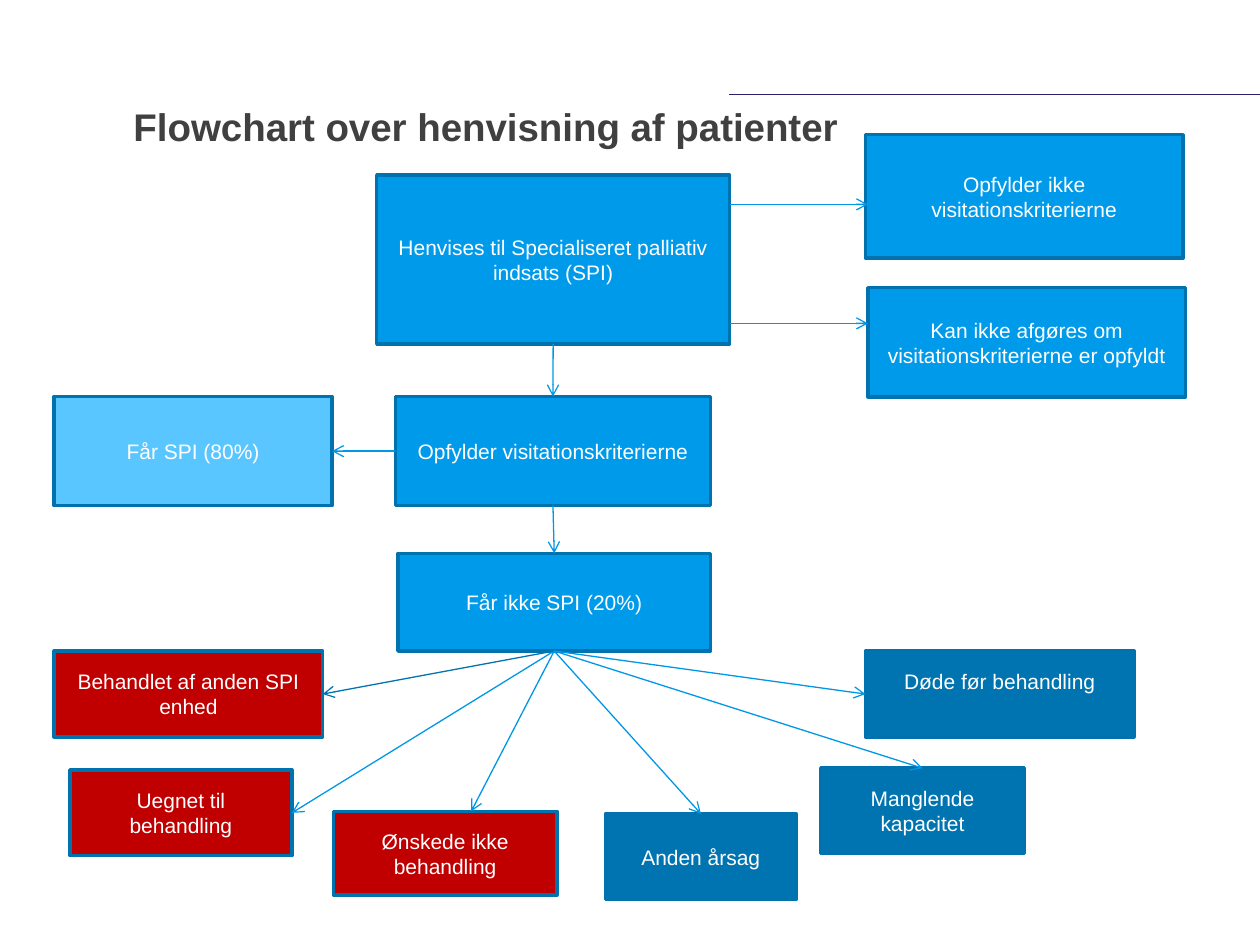
from lxml.etree import SubElement
from pptx import Presentation
from pptx.dml.color import RGBColor
from pptx.enum.shapes import MSO_CONNECTOR as Connector, MSO_SHAPE as Shape
from pptx.enum.text import MSO_ANCHOR as Anchor, PP_ALIGN as Align
from pptx.oxml.ns import qn
from pptx.util import Pt

WHITE = RGBColor(0xFF, 0xFF, 0xFF)
GREY = RGBColor(0x40, 0x40, 0x40)
PURPLE = RGBColor(0x2A, 0x21, 0x6A)
BLUE = RGBColor(0x00, 0x9A, 0xEB)
LIGHT_BLUE = RGBColor(0x5A, 0xC6, 0xFF)
DARK_BLUE = RGBColor(0x00, 0x74, 0xB0)
BORDER = RGBColor(0x00, 0x72, 0xAE)
ARROW = RGBColor(0x00, 0x97, 0xE6)
RED = RGBColor(0xC0, 0x00, 0x00)
TOP, LEFT, BOTTOM, RIGHT = range(4)

BOXES = {
    "referred": ("Henvises til Specialiseret palliativ indsats (SPI)", BLUE, 215.3, 100, 201.6, 96.6),
    "rejected": ("Opfylder ikke visitationskriterierne", BLUE, 494.6, 77, 181.4, 70.6),
    "unsettled": ("Kan ikke afgøres om visitationskriterierne er opfyldt", BLUE, 496, 164.4, 181.4, 62.4),
    "treated": ("Får SPI (80%)", LIGHT_BLUE, 31, 226.6, 158.8, 62.4),
    "eligible": ("Opfylder visitationskriterierne", BLUE, 226, 226.6, 180, 62.4),
    "untreated": ("Får ikke SPI (20%)", BLUE, 227.4, 316.2, 178.6, 55.8),
    "elsewhere": ("Behandlet af anden SPI enhed", RED, 31, 372, 153.4, 49.2),
    "unsuited": ("Uegnet til behandling", RED, 40, 440, 126.8, 49),
    "declined": ("Ønskede ikke behandling", RED, 190.6, 463.6, 127.6, 48),
    "other": ("Anden årsag", DARK_BLUE, 346, 465, 109, 49),
    "capacity": ("Manglende kapacitet", DARK_BLUE, 469, 439, 116.4, 48.6),
    "died": ("Døde før behandling", DARK_BLUE, 494.6, 372, 153.4, 49.2),
}
LINKS = [
    ("referred", BOTTOM, "eligible", TOP, ARROW),
    ("eligible", LEFT, "treated", RIGHT, ARROW),
    ("eligible", BOTTOM, "untreated", TOP, ARROW),
    ("untreated", BOTTOM, "unsuited", RIGHT, ARROW),
    ("untreated", BOTTOM, "other", TOP, ARROW),
    ("untreated", BOTTOM, "capacity", TOP, ARROW),
    ("untreated", BOTTOM, "died", LEFT, ARROW),
    ("untreated", BOTTOM, "elsewhere", RIGHT, DARK_BLUE),
]


def add_span(para, text, size, color, bold=False):
    """Add one formatted run to a paragraph."""
    span = para.add_run()
    span.text = text
    span.font.name = "Arial"
    span.font.size = Pt(size)
    span.font.bold = bold
    span.font.color.rgb = color


def add_title(page, text):
    """Add the slide heading."""
    frame = page.shapes.add_textbox(Pt(76.3), Pt(26), Pt(570), Pt(59.8)).text_frame
    frame.word_wrap = True
    frame.vertical_anchor = Anchor.BOTTOM
    frame.margin_left = frame.margin_right = frame.margin_top = frame.margin_bottom = 0
    para = frame.paragraphs[0]
    para.line_spacing = 0.9
    add_span(para, text, 22, GREY, True)


def add_box(page, text, fill, left, top, width, height):
    """Add a bordered rectangle with centred text."""
    box = page.shapes.add_shape(Shape.RECTANGLE, Pt(left), Pt(top), Pt(width), Pt(height))
    box.shadow.inherit = False
    box.fill.solid()
    box.fill.fore_color.rgb = fill
    box.line.color.rgb = BORDER
    box.line.width = Pt(2)
    frame = box.text_frame
    frame.word_wrap = True
    frame.vertical_anchor = Anchor.MIDDLE
    para = frame.paragraphs[0]
    para.alignment = Align.CENTER
    add_span(para, text, 12, WHITE)
    return box


def add_line(page, color, width, start=(0, 0), end=(0, 0)):
    """Add a straight line without shadow."""
    line = page.shapes.add_connector(Connector.STRAIGHT, *(Pt(value) for value in (*start, *end)))
    line.line.color.rgb = color
    line.line.width = Pt(width)
    SubElement(line._element.spPr, qn("a:effectLst"))
    return line


def add_arrow(page, color=ARROW, start=(0, 0), end=(0, 0)):
    """Add a thin line with an open arrowhead at its end."""
    arrow = add_line(page, color, 0.75, start, end)
    SubElement(arrow.line._get_or_add_ln(), qn("a:tailEnd"), type="arrow")
    return arrow


def main():
    """Build the patient referral flowchart."""
    deck = Presentation()
    deck.slide_width, deck.slide_height = Pt(720), Pt(540)
    page = deck.slides.add_slide(deck.slide_layouts[6])
    add_line(page, PURPLE, 0.5, (720, 54), (416.8, 54))
    add_title(page, "Flowchart over henvisning af patienter")
    boxes = {name: add_box(page, *details) for name, details in BOXES.items()}
    boxes["died"].text_frame.margin_bottom = Pt(18)
    for source, source_side, target, target_side, color in LINKS:
        arrow = add_arrow(page, color)
        arrow.begin_connect(boxes[source], source_side)
        arrow.end_connect(boxes[target], target_side)
    for height in (116.8, 184.8):
        add_arrow(page, start=(416.9, height), end=(496, height))
    add_arrow(page, end=(269.3, 463.6)).begin_connect(boxes["untreated"], BOTTOM)
    deck.save("out.pptx")


if __name__ == "__main__":
    main()
